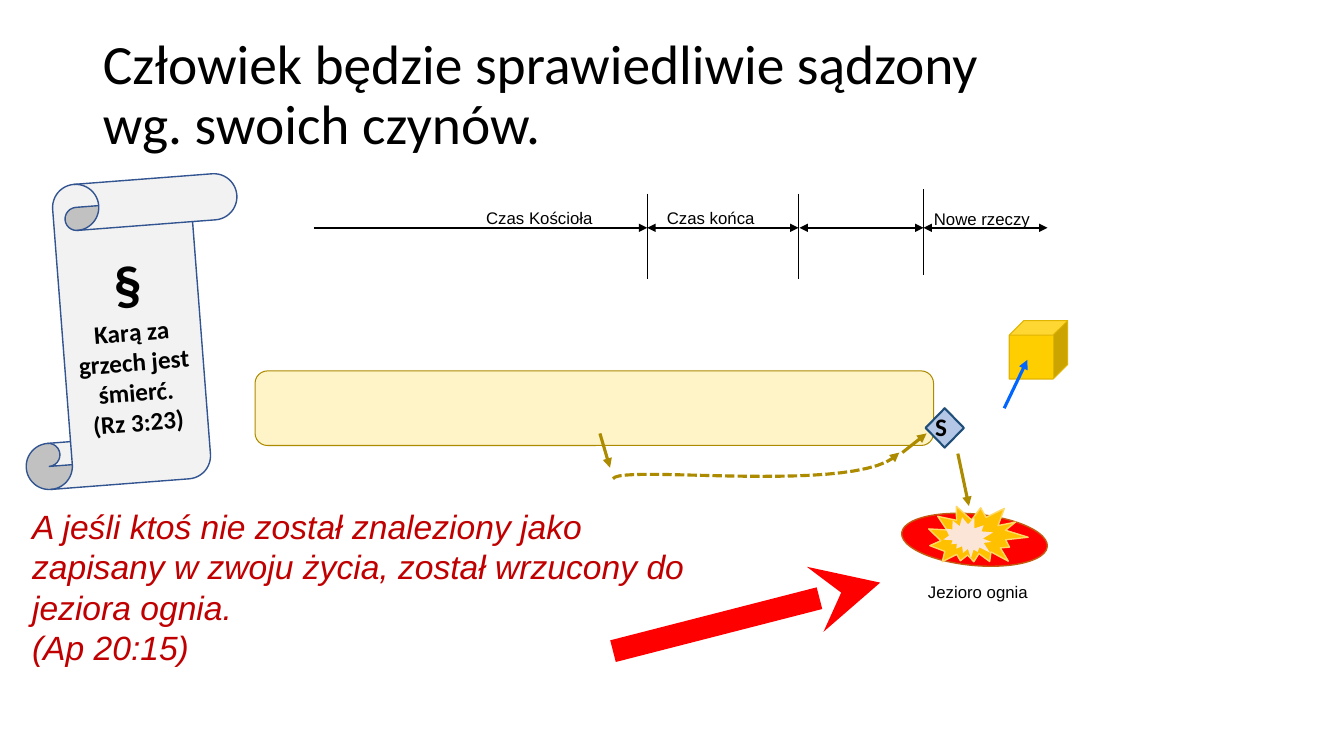
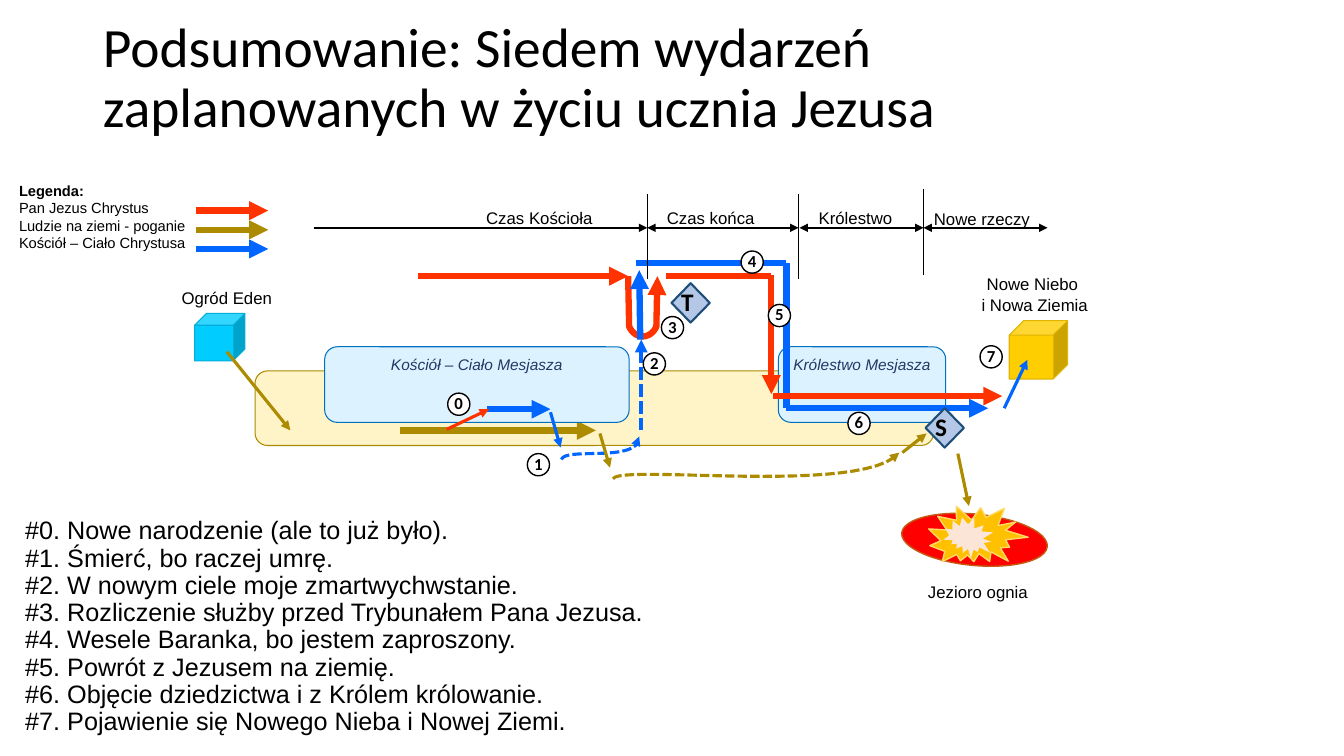
from lxml import etree
from pptx import Presentation
from pptx.dml.color import RGBColor
from pptx.enum.dml import MSO_LINE
from pptx.enum.shapes import MSO_CONNECTOR, MSO_SHAPE
from pptx.enum.text import MSO_ANCHOR, MSO_AUTO_SIZE, PP_ALIGN
from pptx.oxml.ns import qn
from pptx.util import Inches, Pt

BLACK = RGBColor(0x00, 0x00, 0x00)
WHITE = RGBColor(0xFF, 0xFF, 0xFF)
RED = RGBColor(0xFF, 0x00, 0x00)
CRIMSON = RGBColor(0xC0, 0x00, 0x00)
CHRIST = RGBColor(0xFF, 0x33, 0x00)
CHURCH = RGBColor(0x00, 0x66, 0xFF)
PEOPLE = RGBColor(0xAD, 0x8B, 0x00)
SAND = RGBColor(0xFF, 0xF4, 0xC7)
SKY = RGBColor(0xDD, 0xF2, 0xFF)
SKY_EDGE = RGBColor(0x00, 0x70, 0xC0)
NAVY = RGBColor(0x20, 0x38, 0x64)
STEEL = RGBColor(0xB4, 0xC7, 0xE7)
STEEL_EDGE = RGBColor(0x1F, 0x4E, 0x79)
GOLD = RGBColor(0xFF, 0xCE, 0x00)
GOLD_EDGE = RGBColor(0xE0, 0xB4, 0x00)
CYAN = RGBColor(0x00, 0xCC, 0xFF)
CYAN_EDGE = RGBColor(0x00, 0xAE, 0xD8)
RUST = RGBColor(0xC5, 0x5A, 0x11)
FLAME = RGBColor(0xFF, 0xC0, 0x00)
FLAME_EDGE = RGBColor(0xFF, 0xD9, 0x66)
GLOW = RGBColor(0xFB, 0xE5, 0xD6)
PAPER = RGBColor(0xF2, 0xF2, 0xF2)
PAPER_EDGE = RGBColor(0x32, 0x54, 0x91)

LEFT, CENTER = PP_ALIGN.LEFT, PP_ALIGN.CENTER
TOP, MIDDLE = MSO_ANCHOR.TOP, MSO_ANCHOR.MIDDLE
NO_FIT, GROW = MSO_AUTO_SIZE.NONE, MSO_AUTO_SIZE.SHAPE_TO_FIT_TEXT
DASH = MSO_LINE.SQUARE_DOT
STRAIGHT = MSO_CONNECTOR.STRAIGHT
BOX, DIAMOND, OVAL = MSO_SHAPE.ROUNDED_RECTANGLE, MSO_SHAPE.DIAMOND, MSO_SHAPE.OVAL
CUBE, SCROLL = MSO_SHAPE.CUBE, MSO_SHAPE.VERTICAL_SCROLL
LAKE, BURST = MSO_SHAPE.FLOWCHART_CONNECTOR, MSO_SHAPE.EXPLOSION2
TITLE_BODY, TITLE_ONLY = 1, 5
ARIAL, CALIBRI = "Arial", "Calibri"


def bezier(p0, p1, p2, p3, steps=24):
    """Return points along a cubic curve, without its start."""
    points = []
    for i in range(1, steps + 1):
        t = i / steps
        weights = ((1 - t) ** 3, 3 * t * (1 - t) ** 2, 3 * t * t * (1 - t), t ** 3)
        points.append(tuple(sum(w * q[k] for w, q in zip(weights, (p0, p1, p2, p3)))
                            for k in (0, 1)))
    return points


class Deck:
    """Hold the presentation style and the current slide."""

    def __init__(self):
        """Start a widescreen presentation."""
        self.prs = Presentation()
        self.prs.slide_width, self.prs.slide_height = Inches(13.33), Inches(7.5)
        self.s = None

    def slide(self, title, top, height, layout):
        """Add a slide with its title."""
        self.s = self.prs.slides.add_slide(self.prs.slide_layouts[layout])
        sp = self.s.shapes.title
        self.place(sp, 0.92, top, 11.5, height)
        self.fill_text(sp.text_frame, [title], 39.6, font=CALIBRI, spacing=0.9, anchor=MIDDLE)

    def place(self, sp, x, y, w, h):
        """Move and size a shape."""
        sp.left, sp.top, sp.width, sp.height = map(Inches, (x, y, w, h))

    def fill_text(self, tf, paragraphs, size, color=BLACK, font=ARIAL, bold=False, italic=False,
                  align=LEFT, anchor=TOP, spacing=None, inset=None, wrap=True, fit=NO_FIT):
        """Fill a text frame; bold and size may be lists, one value a paragraph."""
        tf.word_wrap, tf.auto_size, tf.vertical_anchor = wrap, fit, anchor
        if inset:
            tf.margin_left = tf.margin_right = Inches(inset[0])
            tf.margin_top = tf.margin_bottom = Inches(inset[1])
        for i, text in enumerate(paragraphs):
            p = tf.paragraphs[0] if i == 0 else tf.add_paragraph()
            p.alignment, p.space_before = align, Pt(0)
            if spacing:
                p.line_spacing = spacing
            for j, line in enumerate(text.split("\n")):
                if j:
                    p.add_line_break()
                r = p.add_run()
                r.text = line
                r.font.name, r.font.italic = font, italic
                r.font.size = Pt(size[i] if isinstance(size, list) else size)
                r.font.bold = bold[i] if isinstance(bold, list) else bold
                r.font.color.rgb = color

    def body(self, lines, x, y, w, h):
        """Put a plain list in the body placeholder."""
        sp = self.s.placeholders[1]
        self.place(sp, x, y, w, h)
        self.fill_text(sp.text_frame, lines, 18, spacing=0.9)
        for p in sp.text_frame.paragraphs:
            pPr = p._p.get_or_add_pPr()
            pPr.set("marL", "0")
            pPr.set("indent", "0")
            etree.SubElement(pPr, qn("a:buNone"))

    def text(self, paragraphs, x, y, w, h, size, **style):
        """Add a text box."""
        sp = self.s.shapes.add_textbox(*map(Inches, (x, y, w, h)))
        self.fill_text(sp.text_frame, paragraphs, size, fit=GROW, **style)

    def label(self, text, x, y, w=1.44, h=0.26):
        """Add a small centred caption."""
        self.text([text], x, y, w, h, 12, align=CENTER, anchor=MIDDLE, inset=(0.03, 0.03))

    def shape(self, kind, x, y, w, h, fill, edge=None, width=0.75, rotation=0, adj=None):
        """Add a filled preset shape."""
        sp = self.s.shapes.add_shape(kind, *map(Inches, (x, y, w, h)))
        sp.shadow.inherit = False
        sp.rotation = rotation
        sp.fill.solid()
        sp.fill.fore_color.rgb = fill
        if edge is None:
            sp.line.fill.background()
        else:
            sp.line.color.rgb, sp.line.width = edge, Pt(width)
        if adj is not None:
            sp.adjustments[0] = adj
        return sp

    def stroke(self, sp, color, width, dash=None, head=None, tail=None):
        """Style a line and its arrowheads."""
        sp.line.color.rgb, sp.line.width = color, Pt(width)
        if dash is not None:
            sp.line.dash_style = dash
        ln = sp._element.spPr.find(qn("a:ln"))
        for tag, end in (("a:headEnd", head), ("a:tailEnd", tail)):
            if end:
                etree.SubElement(ln, qn(tag)).set("type", end)

    def line(self, x1, y1, x2, y2, color=BLACK, width=2.25, **ends):
        """Add a straight connector."""
        sp = self.s.shapes.add_connector(STRAIGHT, *map(Inches, (x1, y1, x2, y2)))
        self.stroke(sp, color, width, **ends)
        etree.SubElement(sp._element.spPr, qn("a:effectLst"))

    def arrow(self, x1, y1, x2, y2, color, width=2.25, dash=None):
        """Add a connector with a triangle at its end."""
        self.line(x1, y1, x2, y2, color, width, dash=dash, tail="triangle")

    def route(self, points, color, width, dash=None):
        """Add an open curved arrow through points."""
        start, *rest = [tuple(map(Inches, pt)) for pt in points]
        builder = self.s.shapes.build_freeform(*start)
        builder.add_line_segments(rest, close=False)
        sp = builder.convert_to_shape()
        sp.shadow.inherit = False
        sp.fill.background()
        self.stroke(sp, color, width, dash, tail="triangle")

    def curve(self, p0, p1, p2, p3, color):
        """Add a dashed curved arrow."""
        self.route([p0] + bezier(p0, p1, p2, p3), color, 2.25, DASH)

    def judgement(self, letter, x, y):
        """Add a diamond with a letter."""
        sp = self.shape(DIAMOND, x, y, 0.38, 0.39, STEEL, STEEL_EDGE, 1.5)
        self.fill_text(sp.text_frame, [letter], 18, font=CALIBRI, bold=True, anchor=MIDDLE,
                       spacing=0.9, inset=(0, 0.04))

    def realm(self, name, x, w):
        """Add a blue named box."""
        sp = self.shape(BOX, x, 3.44, w, 0.75, SKY, SKY_EDGE)
        self.fill_text(sp.text_frame, [name], 11, NAVY, italic=True, align=CENTER, wrap=False)

    def event(self, number, x, y):
        """Add a numbered circle."""
        sp = self.shape(OVAL, x, y, 0.22, 0.22, WHITE, BLACK, 1)
        self.fill_text(sp.text_frame, [str(number)], 12, font=CALIBRI, bold=True, align=CENTER,
                       anchor=MIDDLE, spacing=0.9, wrap=False)

    def earth(self):
        """Add the band of earthly life."""
        self.shape(BOX, 2.53, 3.68, 6.73, 0.74, SAND, PEOPLE)

    def timeline(self):
        """Add the time axis with its eras."""
        self.arrow(3.11, 2.26, 6.42, 2.26, BLACK, 1.5)
        for x1, x2 in ((6.42, 7.92), (7.93, 9.16), (9.16, 10.39)):
            self.line(x1, 2.26, x2, 2.26, width=1.5, head="triangle", tail="triangle")
        for x, y in ((6.42, 1.92), (7.92, 1.92), (9.16, 1.88)):
            self.line(x, y, x, y + 0.85, width=0.5)
        self.label("Czas Kościoła", 4.63, 2.03)
        self.label("Czas końca", 6.48, 2.03, 1.14)
        self.label("Nowe rzeczy", 9.16, 2.04, 1.16)

    def destiny(self):
        """Add the way to judgement, the lake of fire and the new world."""
        self.curve((6.08, 4.75), (6.15, 4.6), (8.57, 4.92), (8.92, 4.49), PEOPLE)
        self.arrow(8.95, 4.49, 9.19, 4.3, PEOPLE)
        self.arrow(5.95, 4.3, 6.05, 4.64, PEOPLE)
        self.judgement("S", 9.18, 4.05)
        self.arrow(9.5, 4.5, 9.61, 5.02, PEOPLE)
        self.shape(CUBE, 10.01, 3.18, 0.58, 0.58, GOLD, GOLD_EDGE)
        self.arrow(9.96, 4.05, 10.19, 3.57, CHURCH)
        self.label("Jezioro ognia", 8.98, 5.74)
        self.shape(LAKE, 8.94, 5.1, 1.45, 0.51, RED, RUST, 1, 5.4)
        self.shape(BURST, 9.21, 4.98, 0.97, 0.68, FLAME, FLAME_EDGE, 1, 16.2)
        self.shape(BURST, 9.38, 5.11, 0.47, 0.45, GLOW, rotation=56.2)


def judgement_slide(deck):
    """Build the slide on just judgement."""
    deck.slide("Człowiek będzie sprawiedliwie sądzony\nwg. swoich czynów.", 0.31, 1.3, TITLE_ONLY)
    deck.earth()
    deck.timeline()
    deck.destiny()
    deck.text(["A jeśli ktoś nie został znaleziony jako zapisany w zwoju życia, "
               "został wrzucony do jeziora ognia.", "(Ap 20:15)"],
              0.22, 4.97, 6.77, 1.72, 24, color=CRIMSON, italic=True)
    deck.line(6.08, 6.46, 8.73, 5.78, RED, 16, tail="stealth")
    sp = deck.shape(SCROLL, 0.16, 1.79, 2.29, 3, PAPER, PAPER_EDGE, 1, 355.6, 0.2)
    deck.fill_text(sp.text_frame, ["§", "Karą za grzech jest śmierć.", "(Rz 3:23)"],
                   [40, 18, 18], font=CALIBRI, bold=True, align=CENTER, anchor=MIDDLE)


def summary_slide(deck):
    """Build the slide on the seven events."""
    deck.slide("Podsumowanie: Siedem wydarzeń\nzaplanowanych w życiu ucznia Jezusa",
               0.4, 0.78, TITLE_BODY)
    deck.earth()
    deck.realm("Królestwo Mesjasza", 7.72, 1.66)
    deck.arrow(3.97, 4.27, 5.91, 4.27, PEOPLE, 4.5)
    deck.realm("Kościół – Ciało Mesjasza", 3.22, 3.02)

    deck.arrow(4.15, 2.74, 6.23, 2.74, CHRIST, 4.5)
    deck.arrow(4.83, 4.06, 5.46, 4.06, CHURCH, 4.5)
    deck.line(6.31, 2.61, 7.8, 2.61, CHURCH, 4.5)
    descent, ascent = (6.24, 3.24), (6.51, 3.24)
    deck.route([(6.23, 2.74), descent, *bezier(descent, (6.3, 3.37), (6.45, 3.37), ascent),
                (6.52, 2.74)], CHRIST, 4.5)
    deck.arrow(7.65, 2.73, 7.65, 3.91, CHRIST, 4.5)
    deck.line(6.61, 2.74, 7.65, 2.74, CHRIST, 4.5)
    deck.line(7.8, 2.61, 7.8, 4.05, CHURCH, 4.5)
    deck.arrow(7.67, 3.93, 9.94, 3.93, CHRIST, 4.5)
    deck.arrow(7.8, 4.05, 9.8, 4.05, CHURCH, 4.5)
    deck.curve((5.57, 4.56), (5.6, 4.43), (6.35, 4.6), (6.34, 4.33), CHURCH)
    deck.arrow(6.35, 3.37, 6.34, 2.68, CHURCH, 4.5)
    deck.arrow(6.36, 4.27, 6.36, 3.37, CHURCH, 3, DASH)

    deck.timeline()
    deck.label("Królestwo", 8.02, 2.03, 0.93)
    deck.arrow(5.46, 4.09, 5.56, 4.44, CHURCH)
    deck.judgement("T", 6.66, 2.81)
    deck.destiny()
    deck.shape(CUBE, 1.93, 3.11, 0.5, 0.47, CYAN, CYAN_EDGE)
    deck.arrow(4.43, 4.26, 4.85, 4.06, CHRIST)
    deck.arrow(2.25, 3.49, 2.88, 4.27, PEOPLE)
    events = ((4.44, 3.9), (5.23, 4.5), (6.38, 3.5), (6.56, 3.14),
              (7.35, 2.49), (7.62, 3.02), (8.41, 4.09), (9.72, 3.43))
    for number, (x, y) in enumerate(events):
        deck.event(number, x, y)

    deck.body(["#0. Nowe narodzenie (ale to już było).",
               "#1. Śmierć, bo raczej umrę.",
               "#2. W nowym ciele moje zmartwychwstanie.",
               "#3. Rozliczenie służby przed Trybunałem Pana Jezusa.",
               "#4. Wesele Baranka, bo jestem zaproszony.",
               "#5. Powrót z Jezusem na ziemię.",
               "#6. Objęcie dziedzictwa i z Królem królowanie.",
               "#7. Pojawienie się Nowego Nieba i Nowej Ziemi."], 0.15, 5.09, 8.62, 2.23)
    for i, color in enumerate((CHRIST, PEOPLE, CHURCH)):
        y = 2.09 + 0.19 * i
        deck.arrow(1.94, y, 2.66, y, color, 4.5)
    deck.text(["Legenda:", "Pan Jezus Chrystus", "Ludzie na ziemi - poganie",
               "Kościół – Ciało Chrystusa"], 0.09, 1.75, 1.99, 0.81, 10.5,
              bold=[True, False, False, False])
    deck.label("Ogród Eden", 1.53, 2.82)
    deck.label("Nowe Niebo\n i Nowa Ziemia", 9.52, 2.69, h=0.46)


def main():
    """Build and save the presentation."""
    deck = Deck()
    judgement_slide(deck)
    summary_slide(deck)
    deck.prs.save("out.pptx")


if __name__ == "__main__":
    main()
